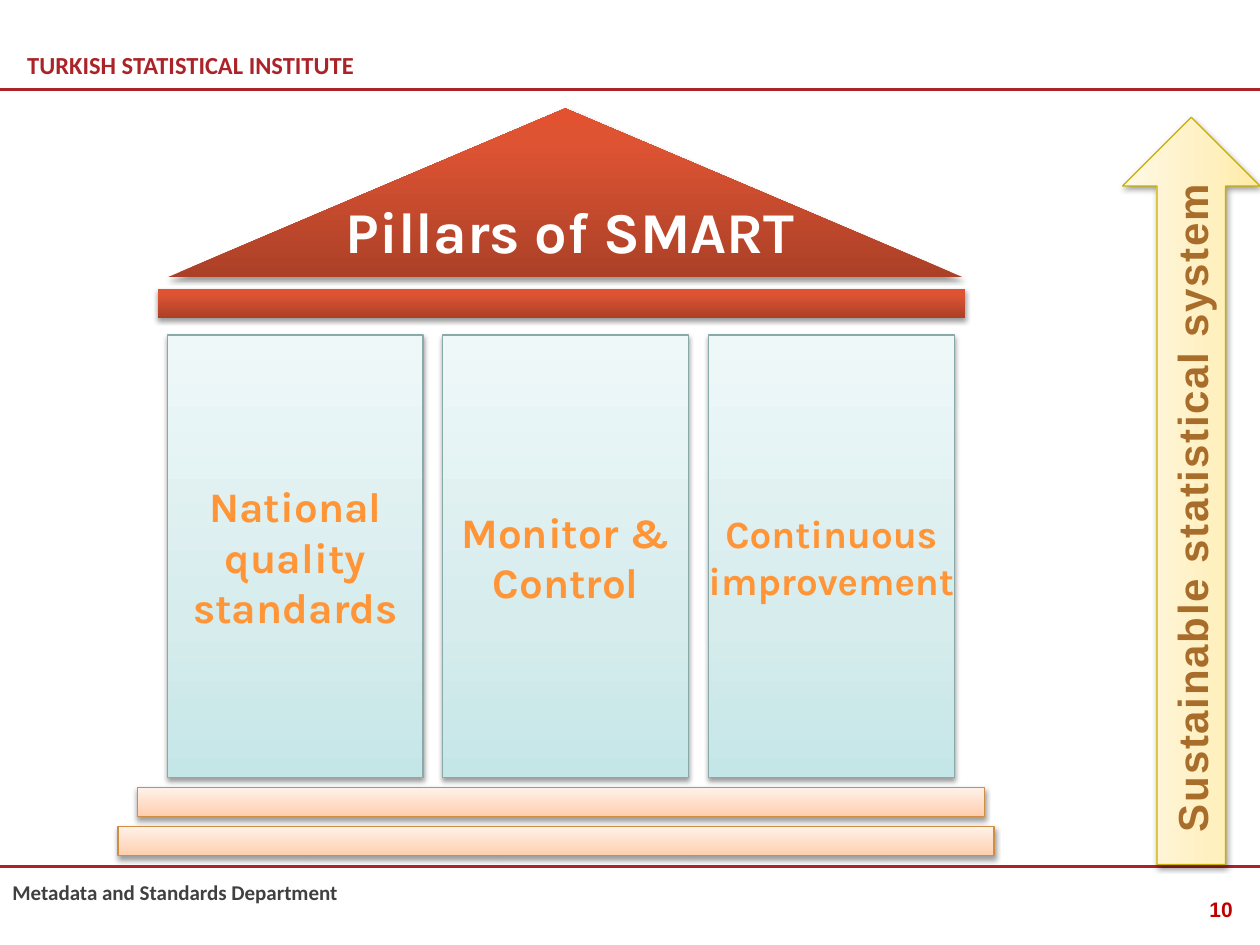
from lxml.etree import SubElement
from pptx import Presentation
from pptx.dml.color import RGBColor
from pptx.enum.shapes import MSO_CONNECTOR, MSO_SHAPE
from pptx.enum.text import MSO_ANCHOR, PP_ALIGN
from pptx.oxml.ns import qn
from pptx.util import Pt

COLORS = {
    "crimson": "AB2328", "footer": "404040", "page": "C00000", "white": "FFFFFF",
    "orange": "FF9537", "brown": "A96D2B", "black": "000000",
    "pillar_edge": "88AAAB", "step_edge": "D08D44", "arrow_edge": "C8B000",
}
# Gradient stops as (position in percent, colour), from bottom to top
GRADIENTS = {
    "roof": [(0, "AB4027"), (80, "DE5433"), (100, "E35230")],
    "step": [(0, "FFCDAC"), (35, "FFDBC4"), (100, "FFF1E8")],
    "pillar": [(0, "C5E6E7"), (35, "D6ECED"), (100, "EFF8F9")],
    "arrow": [(0, "FFEBA5"), (35, "FFF0BF"), (100, "FFF9E7")],
}


def add_block(preset, box, style):
    """Add a preset shape with a gradient, an optional edge and a soft shadow."""
    block = slide.shapes.add_shape(preset, *map(Pt, box))
    block.fill.gradient()
    block.fill.gradient_angle = 90
    stops = block.element.spPr.find(qn("a:gradFill")).find(qn("a:gsLst"))
    for stop in list(stops):
        stops.remove(stop)
    for position, color in GRADIENTS[style]:
        stop = SubElement(stops, qn("a:gs"), pos=str(position * 1000))
        SubElement(stop, qn("a:srgbClr"), val=color)
    if style == "roof":
        block.line.fill.background()
    else:
        block.line.color.rgb = RGBColor.from_string(COLORS[style + "_edge"])
        block.line.width = Pt(0.75)
    block.shadow.inherit = False
    shadow = SubElement(block.element.spPr.find(qn("a:effectLst")), qn("a:outerShdw"),
                        blurRad=str(Pt(3.1)), dist=str(Pt(1.6)),
                        dir="5400000", rotWithShape="0")
    black = SubElement(shadow, qn("a:srgbClr"), val=COLORS["black"])
    SubElement(black, qn("a:alpha"), val="38000")
    return block


def write(holder, lines, color, align=PP_ALIGN.CENTER, anchor=MSO_ANCHOR.MIDDLE,
          wrap=True, **font_format):
    """Fill a shape with one paragraph a line, all in the same format."""
    frame = holder.text_frame
    frame.text = "\n".join(lines)
    frame.word_wrap = wrap
    frame.vertical_anchor = anchor
    for paragraph in frame.paragraphs:
        paragraph.alignment = align
        font = paragraph.runs[0].font
        for name, value in {"bold": True, **font_format}.items():
            setattr(font, name, value)
        font.color.rgb = RGBColor.from_string(COLORS[color])


presentation = Presentation()
presentation.slide_width, presentation.slide_height = Pt(720), Pt(540)
slide = presentation.slides.add_slide(presentation.slide_layouts[5])

# Header, footer and page number
for label, box, color, align, anchor, font_format in [
    ("TURKISH STATISTICAL INSTITUTE", (8.5, 23, 255, 28), "crimson",
     PP_ALIGN.LEFT, MSO_ANCHOR.MIDDLE, {"name": "Calibri", "size": Pt(14)}),
    ("Metadata and Standards Department", (0, 499, 309, 38), "footer",
     PP_ALIGN.LEFT, MSO_ANCHOR.TOP, {"name": "Calibri", "size": Pt(12)}),
    ("10", (677, 509, 34.5, 27), "page",
     PP_ALIGN.RIGHT, MSO_ANCHOR.TOP, {"name": "Arial", "size": Pt(12)}),
]:
    caption = slide.shapes.add_textbox(*map(Pt, box))
    write(caption, [label], color, align, anchor, **font_format)

# Rules below the header and above the footer
for y in (51, 495):
    rule = slide.shapes.add_connector(MSO_CONNECTOR.STRAIGHT, 0, Pt(y), Pt(720), Pt(y))
    rule.line.color.rgb = RGBColor.from_string(COLORS["crimson"])
    rule.line.width = Pt(1.5)
    SubElement(rule.element.spPr, qn("a:effectLst"))

# Temple roof, beam and steps
add_block(MSO_SHAPE.ISOSCELES_TRIANGLE, (95.75, 62, 454.5, 96.5), "roof")
for left, top, width, style in [
    (90, 165, 461.5, "roof"), (78.5, 450, 484, "step"), (67.5, 472.5, 500.5, "step"),
]:
    add_block(MSO_SHAPE.RECTANGLE, (left, top, width, 16.5), style)

# Pillars
pillar_left, pillar_gap = 95.75, 11.25
for lines, width, size in [
    (["National", "quality", "standards"], 146, 24),
    (["Monitor &", "Control"], 140.5, 24),
    (["Continuous", "improvement"], 140.5, 22),
]:
    pillar = add_block(MSO_SHAPE.RECTANGLE, (pillar_left, 191.5, width, 253), "pillar")
    write(pillar, lines, "orange", wrap=False, name="Karla", size=Pt(size))
    pillar_left += width + pillar_gap

# Title on the roof
title = slide.shapes.title
title.left, title.top, title.width, title.height = map(Pt, (174, 108.5, 304, 50.5))
write(title, ["Pillars of SMART"], "white", anchor=MSO_ANCHOR.TOP,
      name="Karla", size=Pt(33))
title.element.getparent().append(title.element)

# Upward arrow
arrow = add_block(MSO_SHAPE.RIGHT_ARROW, (467.25, 241.25, 427, 78.5), "arrow")
arrow.rotation = 270
write(arrow, ["Sustainable statistical system"], "brown", name="Arial", size=Pt(24))
arrow.text_frame.paragraphs[0].runs[0].font._element.set("spc", "100")

presentation.save("out.pptx")
